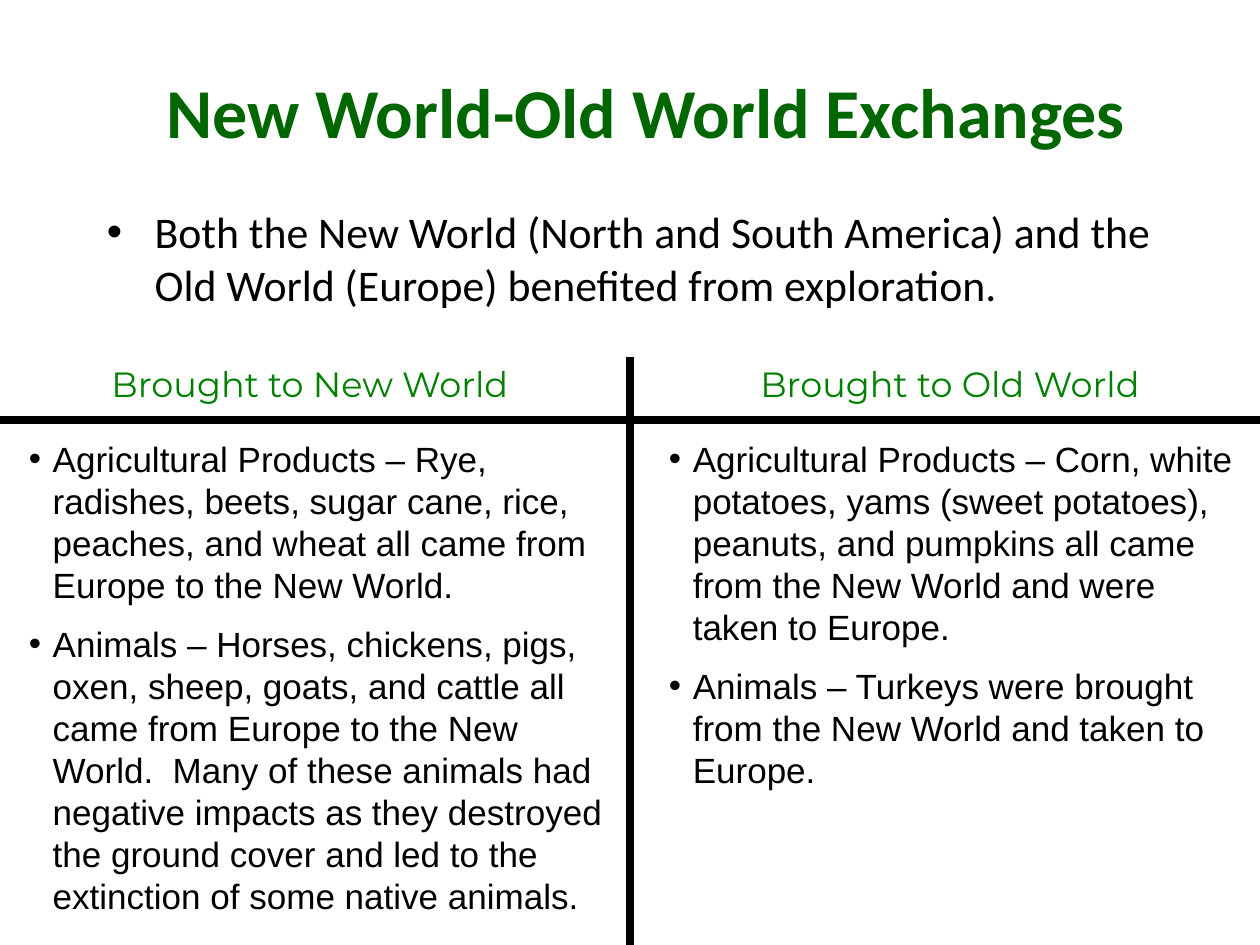
from lxml import etree
from pptx import Presentation
from pptx.dml.color import RGBColor
from pptx.enum.shapes import MSO_CONNECTOR
from pptx.enum.text import MSO_ANCHOR, PP_ALIGN
from pptx.oxml.ns import qn
from pptx.util import Inches, Pt

STRAIGHT = MSO_CONNECTOR.STRAIGHT
TOP, MIDDLE = MSO_ANCHOR.TOP, MSO_ANCHOR.MIDDLE
LEFT, CENTER = PP_ALIGN.LEFT, PP_ALIGN.CENTER
COLORS = {"title": "006600", "heading": "008000", "text": "000000", "rule": "000000"}

prs = Presentation()
prs.slide_width, prs.slide_height = Inches(10), Inches(7.5)
slide = prs.slides.add_slide(prs.slide_layouts[6])


def add_text(box, paragraphs, font, size, color, align=LEFT, anchor=TOP, bold=False):
    frame = slide.shapes.add_textbox(*map(Inches, box)).text_frame
    frame.word_wrap = True
    frame.vertical_anchor = anchor
    frame.text = "\n".join(paragraphs)
    for paragraph in frame.paragraphs:
        paragraph.alignment = align
        paragraph.font.name = font
        paragraph.font.size = Pt(size)
        paragraph.font.bold = bold
        paragraph.font.color.rgb = RGBColor.from_string(COLORS[color])
    return frame


def add_bullets(frame, margin, hanging):
    for index, paragraph in enumerate(frame.paragraphs):
        if index:
            paragraph.space_before = Pt(10)
        properties = paragraph._p.get_or_add_pPr()
        properties.set("marL", str(Inches(margin)))
        properties.set("indent", str(-Inches(hanging)))
        bullet_font = etree.Element(qn("a:buFont"), typeface="Arial")
        bullet = etree.Element(qn("a:buChar"), char="•")
        position = 1 if index else 0
        properties.insert(position, bullet_font)
        properties.insert(position + 1, bullet)


add_text((0.5, 0.25, 9.25, 1.25), ["New World-Old World Exchanges"],
         "Calibri", 40, "title", CENTER, MIDDLE, True)
summary = add_text(
    (0.75, 1.58, 8.5, 1),
    ["Both the New World (North and South America) and the Old World (Europe) "
     "benefited from exploration."],
    "Calibri", 25, "text")
add_bullets(summary, 0.38, 0.38)

for ends in [(5, 2.83, 5, 7.5), (0, 3.33, 10, 3.33)]:
    rule = slide.shapes.add_connector(STRAIGHT, *map(Inches, ends))
    rule.line.color.rgb = RGBColor.from_string(COLORS["rule"])
    rule.line.width = Pt(4.5)
    etree.SubElement(rule._element.spPr, qn("a:effectLst"))

exchanges = [
    (0, 3.93, "Brought to New World", [
        "Agricultural Products – Rye, radishes, beets, sugar cane, rice, peaches, "
        "and wheat all came from Europe to the New World.",
        "Animals – Horses, chickens, pigs, oxen, sheep, goats, and cattle all came "
        "from Europe to the New World.  Many of these animals had negative impacts "
        "as they destroyed the ground cover and led to the extinction of some "
        "native animals.",
    ]),
    (5.08, 2.93, "Brought to Old World", [
        "Agricultural Products – Corn, white potatoes, yams (sweet potatoes), "
        "peanuts, and pumpkins all came from the New World and were taken to Europe.",
        "Animals – Turkeys were brought from the New World and taken to Europe.",
    ]),
]
for left, height, heading, goods in exchanges:
    add_text((left, 2.83, 4.92, 0.43), [heading], "Montserrat", 20, "heading", CENTER)
    goods_list = add_text((left, 3.42, 4.92, height), goods, "Arial", 20, "text")
    add_bullets(goods_list, 0.32, 0.19)

prs.save("out.pptx")
